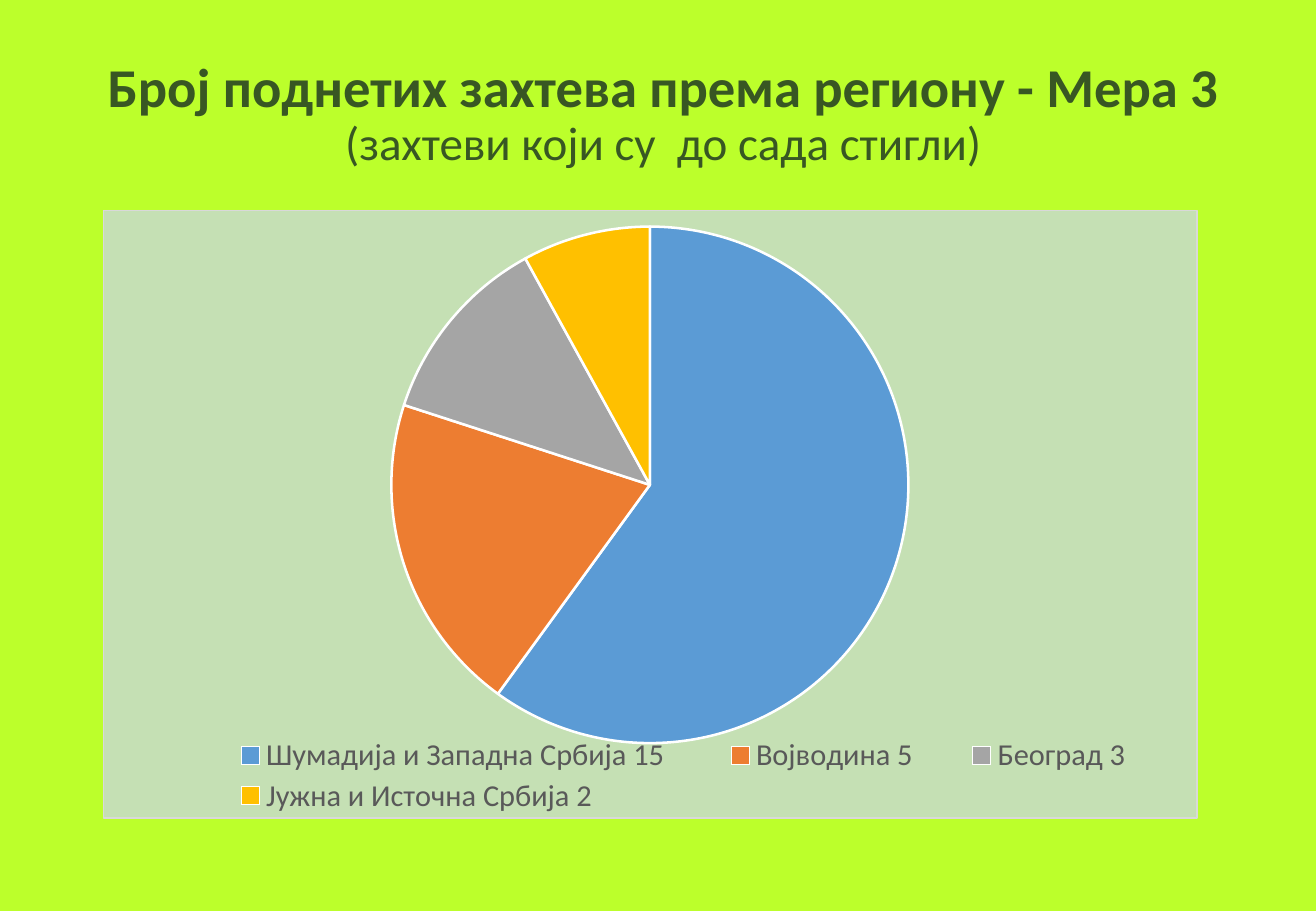
from typing import NamedTuple

from pptx import Presentation
from pptx.chart.data import CategoryChartData
from pptx.dml.color import RGBColor
from pptx.enum.chart import XL_CHART_TYPE, XL_LEGEND_POSITION
from pptx.enum.text import MSO_ANCHOR, PP_ALIGN
from pptx.oxml import parse_xml
from pptx.oxml.ns import nsdecls
from pptx.util import Pt

PIE = XL_CHART_TYPE.PIE
LEGEND_BOTTOM = XL_LEGEND_POSITION.BOTTOM
MIDDLE = MSO_ANCHOR.MIDDLE
CENTER = PP_ALIGN.CENTER

FONT = "Calibri"
BACKGROUND = "BCFF2B"
TITLE_COLOR = "385723"
LEGEND_COLOR = "595959"
PANEL_FILL = "C5E0B4"
PANEL_BORDER = "D9D9D9"
WHITE = "FFFFFF"


class Region(NamedTuple):
    label: str
    share: int
    color: str


class Box(NamedTuple):
    """Left, top, width and height."""
    x: float
    y: float
    w: float
    h: float


REGIONS = [
    Region("Шумадија и Западна Србијa 15 ", 60, "5B9BD5"),
    Region("Војводина 5", 20, "ED7D31"),
    Region("Београд 3", 12, "A5A5A5"),
    Region("Јужна и Источна Србија 2", 8, "FFC000"),
]

TITLE_BOX = Box(34.56, 21.6, 717.12, 93.6)
CHART_BOX = Box(61.2, 124.56, 648.72, 360.72)
# Fractions of the chart area
PIE_AREA = Box(0.263, 0.026, 0.473, 0.851)
LEGEND_AREA = Box(0.08, 0.86, 0.9, 0.14)


def rgb(color: str) -> RGBColor:
    return RGBColor.from_string(color)


def points(box: Box) -> list[Pt]:
    return [Pt(length) for length in box]


def add_line(paragraph, text: str, *, size: float, color: str, bold: bool = False) -> None:
    """Fill a centred title paragraph with one formatted run."""
    paragraph.alignment = CENTER
    paragraph.line_spacing = 0.9
    run = paragraph.add_run()
    run.text = text
    run.font.name = FONT
    run.font.size = Pt(size)
    run.font.bold = bold
    run.font.color.rgb = rgb(color)


def manual_layout(area: Box, target: str = ""):
    return parse_xml(
        f'<c:layout {nsdecls("c")}><c:manualLayout>{target}'
        '<c:xMode val="edge"/><c:yMode val="edge"/>'
        f'<c:x val="{area.x}"/><c:y val="{area.y}"/>'
        f'<c:w val="{area.w}"/><c:h val="{area.h}"/>'
        '</c:manualLayout></c:layout>'
    )


def add_title(slide) -> None:
    frame = slide.shapes.add_textbox(*points(TITLE_BOX)).text_frame
    frame.word_wrap = True
    frame.vertical_anchor = MIDDLE
    add_line(frame.paragraphs[0], "Број поднетих захтева према региону - Мера 3",
             size=32.4, color=TITLE_COLOR, bold=True)
    add_line(frame.add_paragraph(), "(захтеви који су  до сада стигли)",
             size=27.9, color=TITLE_COLOR)


def style_panel(chart) -> None:
    """Fill and outline the chart area, and place the pie and the legend."""
    space = chart._chartSpace
    space.chart.addnext(parse_xml(
        f'<c:spPr {nsdecls("c", "a")}>'
        f'<a:solidFill><a:srgbClr val="{PANEL_FILL}"/></a:solidFill>'
        f'<a:ln w="{Pt(0.75)}"><a:solidFill><a:srgbClr val="{PANEL_BORDER}"/>'
        '</a:solidFill></a:ln></c:spPr>'
    ))
    plot_area = space.chart.plotArea
    for layout in plot_area.findall("{*}layout"):
        plot_area.remove(layout)
    plot_area.insert(0, manual_layout(PIE_AREA, '<c:layoutTarget val="inner"/>'))

    legend = space.chart.find("{*}legend")
    for layout in legend.findall("{*}layout"):
        legend.remove(layout)
    legend.find("{*}legendPos").addnext(manual_layout(LEGEND_AREA))


def add_region_chart(slide) -> None:
    data = CategoryChartData()
    data.categories = [region.label for region in REGIONS]
    data.add_series("Series 1", [region.share for region in REGIONS])
    chart = slide.shapes.add_chart(PIE, *points(CHART_BOX), data).chart
    chart.has_title = False
    chart.font.name = FONT
    chart.font.size = Pt(10)

    chart.has_legend = True
    legend = chart.legend
    legend.position = LEGEND_BOTTOM
    legend.include_in_layout = False
    legend.font.name = FONT
    legend.font.size = Pt(18)
    legend.font.color.rgb = rgb(LEGEND_COLOR)

    plot = chart.plots[0]
    plot.vary_by_categories = True
    for index, region in enumerate(REGIONS):
        slice_format = plot.series[0].points[index].format
        slice_format.fill.solid()
        slice_format.fill.fore_color.rgb = rgb(region.color)
        slice_format.line.color.rgb = rgb(WHITE)
        slice_format.line.width = Pt(1.5)
    style_panel(chart)


def main() -> None:
    deck = Presentation()
    deck.slide_width, deck.slide_height = Pt(780), Pt(540)
    slide = deck.slides.add_slide(deck.slide_layouts[6])
    slide.background.fill.solid()
    slide.background.fill.fore_color.rgb = rgb(BACKGROUND)
    add_title(slide)
    add_region_chart(slide)
    deck.save("out.pptx")


if __name__ == "__main__":
    main()
